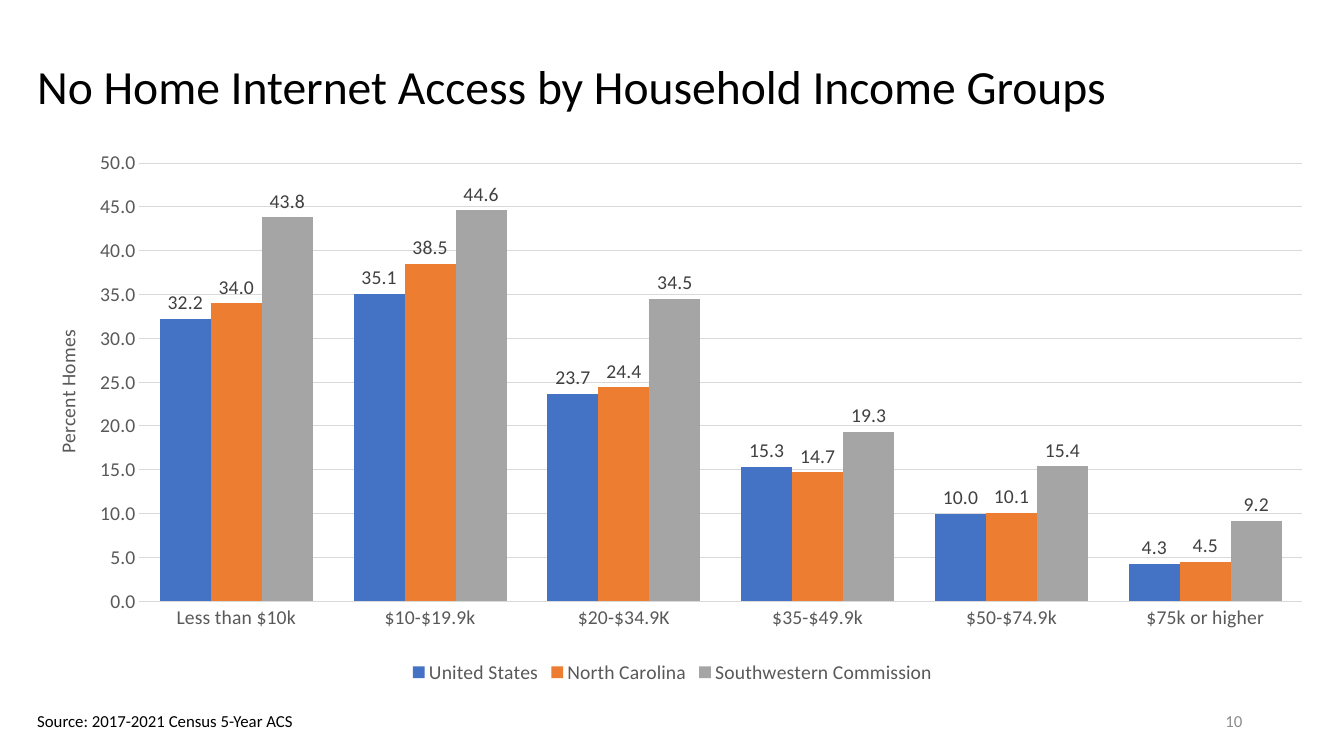
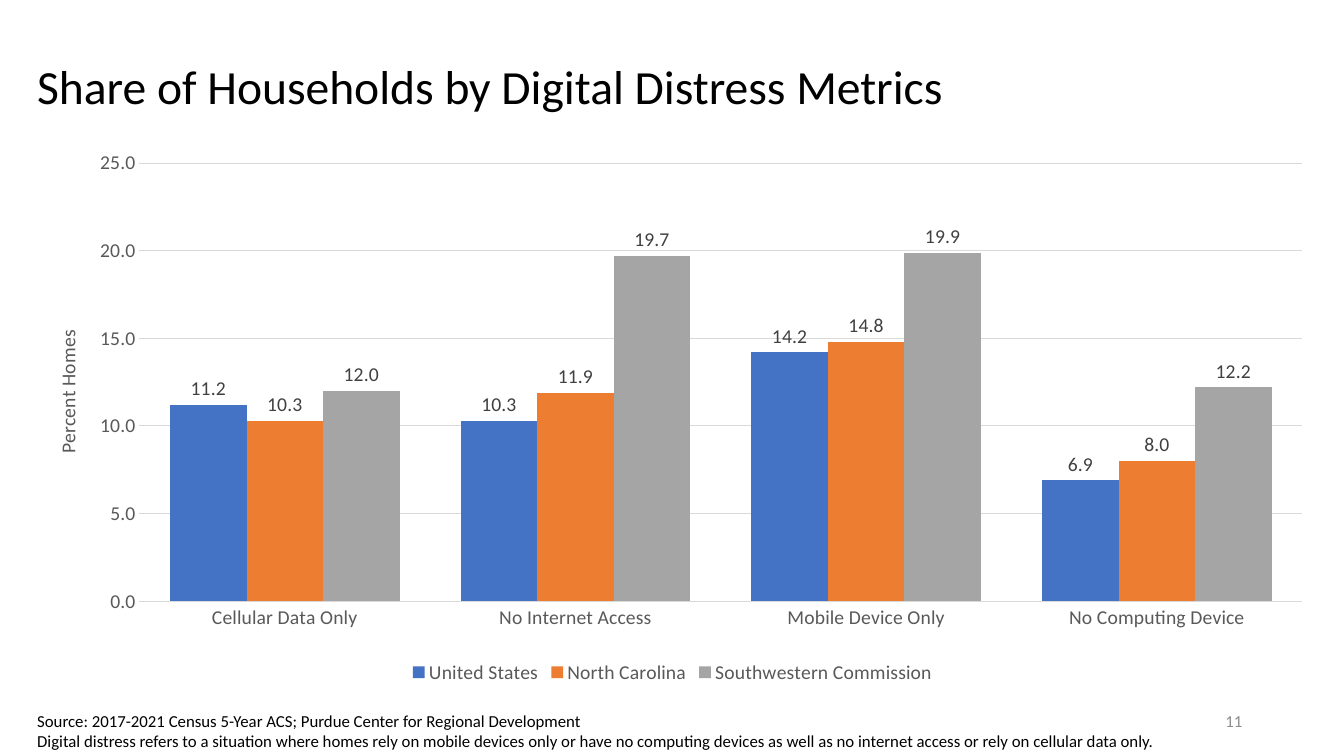
from pptx import Presentation
from pptx.chart.data import CategoryChartData
from pptx.dml.color import RGBColor
from pptx.enum.chart import XL_CHART_TYPE, XL_LABEL_POSITION, XL_LEGEND_POSITION, XL_TICK_MARK
from pptx.enum.text import MSO_ANCHOR, MSO_AUTO_SIZE, PP_ALIGN
from pptx.oxml import parse_xml
from pptx.oxml.ns import nsdecls
from pptx.util import Inches, Pt

COLUMNS = XL_CHART_TYPE.COLUMN_CLUSTERED
OUTSIDE = XL_LABEL_POSITION.OUTSIDE_END
LEGEND_BOTTOM = XL_LEGEND_POSITION.BOTTOM
NO_TICK = XL_TICK_MARK.NONE
TOP, MIDDLE = MSO_ANCHOR.TOP, MSO_ANCHOR.MIDDLE
LEFT, RIGHT = PP_ALIGN.LEFT, PP_ALIGN.RIGHT
GROW = MSO_AUTO_SIZE.SHAPE_TO_FIT_TEXT

BLACK = RGBColor(0x00, 0x00, 0x00)
NUMBER_GREY = RGBColor(0x8C, 0x8C, 0x8C)
AXIS_GREY = RGBColor(0x59, 0x59, 0x59)
LABEL_GREY = RGBColor(0x40, 0x40, 0x40)
GRID_GREY = RGBColor(0xD9, 0xD9, 0xD9)
BLUE = RGBColor(0x44, 0x72, 0xC4)
ORANGE = RGBColor(0xED, 0x7D, 0x31)
GREY = RGBColor(0xA5, 0xA5, 0xA5)

FONT = "Calibri"
NUMBER_FORMAT = "#,##0.0"
REGIONS = [("United States", BLUE), ("North Carolina", ORANGE), ("Southwestern Commission", GREY)]

WIDTH, HEIGHT = 13.33, 7.5
MARGIN = 0.27
TITLE_BOX = (MARGIN, 0.34, 12.76, 1.09)
CHART_BOX = (MARGIN, 1.43, 12.8, 5.4)
NUMBER_BOX = (9.42, 6.95, 3, 0.4)
SOURCE_TOP, SOURCE_LINE = 7, 0.2

SLIDES = [
    {
        "title": "No Home Internet Access by Household Income Groups",
        "number": "10",
        "source": ["Source: 2017-2021 Census 5-Year ACS"],
        "source_width": 2.78,
        "maximum": 50,
        "categories": ["Less than $10k", "$10-$19.9k", "$20-$34.9K",
                       "$35-$49.9k", "$50-$74.9k", "$75k or higher"],
        "values": [
            [32.2, 35.1, 23.7, 15.3, 10.0, 4.3],
            [34.0, 38.5, 24.4, 14.7, 10.1, 4.5],
            [43.8, 44.6, 34.5, 19.3, 15.4, 9.2],
        ],
    },
    {
        "title": "Share of Households by Digital Distress Metrics",
        "number": "11",
        "source": [
            "Source: 2017-2021 Census 5-Year ACS; Purdue Center for Regional Development",
            "Digital distress refers to a situation where homes rely on mobile devices only "
            "or have no computing devices as well as no internet access or rely on cellular data only.",
        ],
        "source_width": 11.38,
        "maximum": 25,
        "categories": ["Cellular Data Only", "No Internet Access",
                       "Mobile Device Only", "No Computing Device"],
        "values": [
            [11.2, 10.3, 14.2, 6.9],
            [10.3, 11.9, 14.8, 8.0],
            [12.0, 19.7, 19.9, 12.2],
        ],
    },
]


def set_font(font, size, color):
    font.name = FONT
    font.size = Pt(size)
    font.bold = False
    font.color.rgb = color


def add_text(s, box, lines, size, color, anchor=TOP, align=LEFT, wrap=True, spacing=None):
    tf = s.shapes.add_textbox(*map(Inches, box)).text_frame
    tf.word_wrap = wrap
    tf.vertical_anchor = anchor
    if not wrap:
        tf.auto_size = GROW
    tf.text = "\n".join(lines)
    for p in tf.paragraphs:
        p.alignment = align
        p.line_spacing = spacing
        for r in p.runs:
            set_font(r.font, size, color)


def set_layout(parent, index, target="", **shares):
    for old in parent.xpath("c:layout"):
        parent.remove(old)
    inner = f'<c:layoutTarget val="{target}"/>' if target else ""
    modes = "".join(f'<c:{side}Mode val="edge"/>' for side in "xy")
    sizes = "".join(f'<c:{name} val="{share}"/>' for name, share in shares.items())
    parent.insert(index, parse_xml(
        f'<c:layout {nsdecls("c")}><c:manualLayout>{inner}{modes}{sizes}</c:manualLayout></c:layout>'))


def style_axes(chart, maximum):
    cat, val = chart.category_axis, chart.value_axis
    for axis in (cat, val):
        axis.major_tick_mark = axis.minor_tick_mark = NO_TICK
        set_font(axis.tick_labels.font, 14, AXIS_GREY)
    val.minimum_scale, val.maximum_scale, val.major_unit = 0, maximum, 5
    val.tick_labels.number_format = NUMBER_FORMAT
    val.tick_labels.number_format_is_linked = False
    val.format.line.fill.background()
    for line in (cat.format.line, val.major_gridlines.format.line):
        line.color.rgb = GRID_GREY
        line.width = Pt(0.75)
    tf = val.axis_title.text_frame
    tf.text = "Percent Homes"
    set_font(tf.paragraphs[0].runs[0].font, 14, AXIS_GREY)
    title = val.axis_title._element
    title.xpath(".//a:bodyPr")[0].set("rot", "-5400000")
    set_layout(title, 1, x=0.018, y=0.335)


def add_column_chart(s, categories, values, maximum):
    data = CategoryChartData(number_format=NUMBER_FORMAT)
    data.categories = categories
    for (region, _), row in zip(REGIONS, values):
        data.add_series(region, row)
    chart = s.shapes.add_chart(COLUMNS, *map(Inches, CHART_BOX), data).chart
    set_font(chart.font, 14, BLACK)
    chart.has_title = False
    chart.has_legend = True
    chart.legend.position = LEGEND_BOTTOM
    chart.legend.include_in_layout = False
    set_font(chart.legend.font, 14, AXIS_GREY)
    plot = chart.plots[0]
    plot.gap_width, plot.overlap = 80, 0
    plot.vary_by_categories = False
    for series, (_, color) in zip(plot.series, REGIONS):
        series.format.fill.solid()
        series.format.fill.fore_color.rgb = color
        labels = series.data_labels
        labels.show_value = True
        labels.position = OUTSIDE
        labels.number_format = NUMBER_FORMAT
        labels.number_format_is_linked = False
        set_font(labels.font, 14, LABEL_GREY)
    style_axes(chart, maximum)
    plot_area = chart._chartSpace.xpath("c:chart/c:plotArea")[0]
    set_layout(plot_area, 0, "inner", x=0.087, y=0.035, w=0.901, h=0.805)


def add_chart_slide(prs, content):
    s = prs.slides.add_slide(prs.slide_layouts[6])
    add_text(s, TITLE_BOX, [content["title"]], 34, BLACK, anchor=MIDDLE, spacing=0.9)
    add_text(s, NUMBER_BOX, [content["number"]], 12, NUMBER_GREY, anchor=MIDDLE, align=RIGHT)
    add_column_chart(s, content["categories"], content["values"], content["maximum"])
    source = content["source"]
    source_box = (MARGIN, SOURCE_TOP, content["source_width"], 0.1 + SOURCE_LINE * len(source))
    add_text(s, source_box, source, 12, BLACK, wrap=False)


def main():
    prs = Presentation()
    prs.slide_width, prs.slide_height = Inches(WIDTH), Inches(HEIGHT)
    for content in SLIDES:
        add_chart_slide(prs, content)
    prs.save("out.pptx")


if __name__ == "__main__":
    main()
